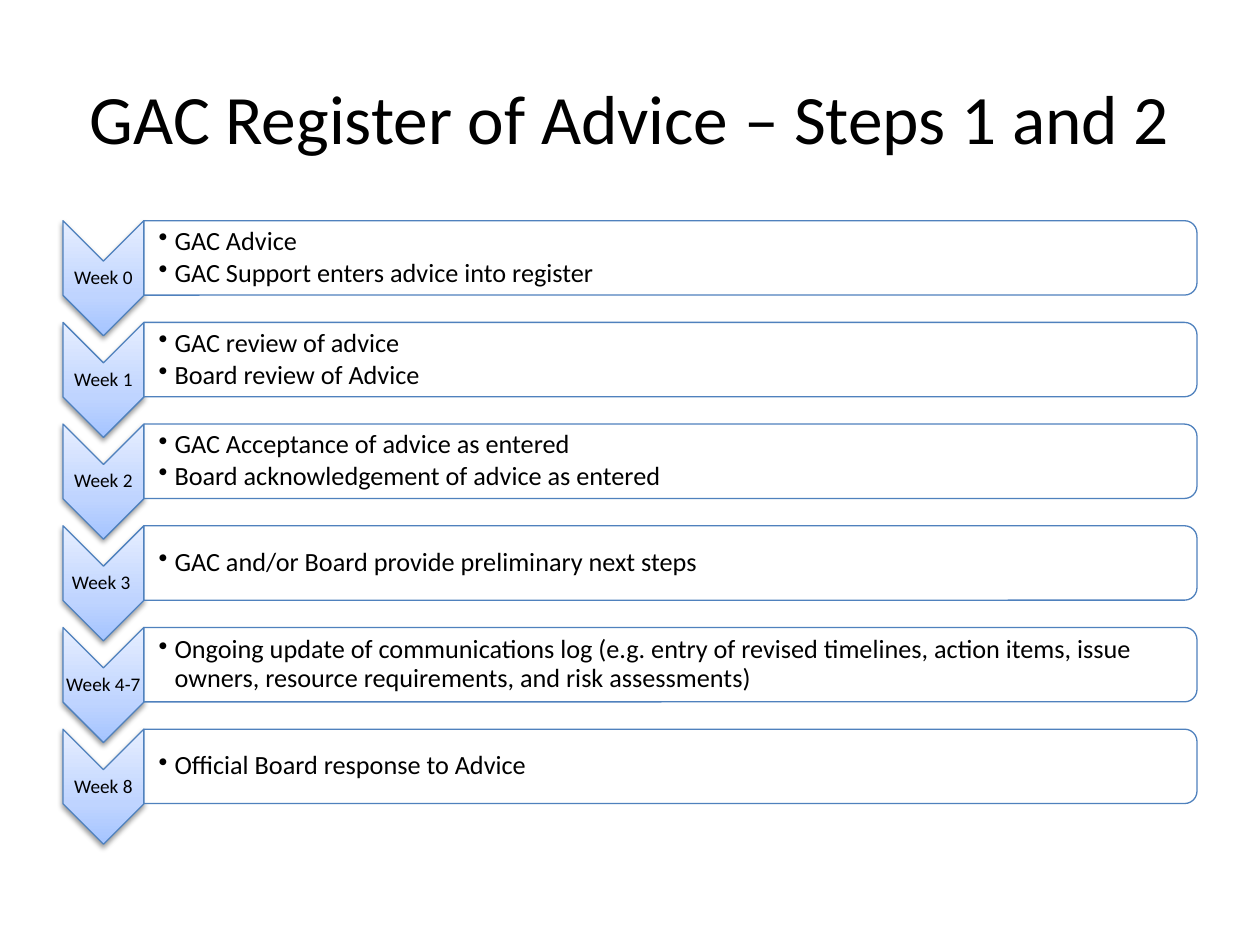
from typing import NamedTuple

from lxml.etree import SubElement
from pptx import Presentation
from pptx.dml.color import RGBColor
from pptx.enum.shapes import MSO_SHAPE as SHAPE
from pptx.enum.text import MSO_ANCHOR as ANCHOR, PP_ALIGN as ALIGN
from pptx.oxml import parse_xml
from pptx.oxml.ns import nsdecls, qn
from pptx.util import Cm, Pt


class Step(NamedTuple):
    week: str
    items: list[str]


class Box(NamedTuple):
    left: float
    top: float
    width: float
    height: float


STEPS = [
    Step("Week 0", ["GAC Advice", "GAC Support enters advice into register"]),
    Step("Week 1", ["GAC review of advice", "Board review of Advice"]),
    Step("Week 2", ["GAC Acceptance of advice as entered",
                    "Board acknowledgement of advice as entered"]),
    Step("Week 3 ", ["GAC and/or Board provide preliminary next steps"]),
    Step("Week 4-7", ["Ongoing update of communications log (e.g. entry of revised "
                      "timelines, action items, issue owners, resource requirements, "
                      "and risk assessments)"]),
    Step("Week 8", ["Official Board response to Advice"]),
]
FIRST_TOP, PITCH = 4.45, 2.05
ARROW_LEFT, ARROW_WIDTH, ARROW_HEIGHT = 1.27, 1.63, 2.32
PANEL_WIDTH, PANEL_HEIGHT = 21.23, 1.5
PANEL_LEFT = ARROW_LEFT + ARROW_WIDTH
GRADIENT = [(0, "A4C4FF"), (35, "BFD4FF"), (100, "E6EEFF")]
OUTLINE = "4F81BD"


def color(value: str) -> RGBColor:
    return RGBColor.from_string(value)


def add_text(slide, box: Box, lines: list[str], *, size: float, align=ALIGN.LEFT,
             inset: float = 0.03, left_inset: float = 0.03, spacing: float = 0.9,
             after: float = 0, bullet: bool = False) -> None:
    tf = slide.shapes.add_textbox(*map(Cm, box)).text_frame
    tf.word_wrap = True
    tf.vertical_anchor = ANCHOR.MIDDLE
    tf.margin_left = Cm(left_inset)
    tf.margin_top = tf.margin_right = tf.margin_bottom = Cm(inset)
    for i, line in enumerate(lines):
        p = tf.paragraphs[0] if i == 0 else tf.add_paragraph()
        p.alignment, p.line_spacing, p.space_after = align, spacing, Pt(after)
        r = p.add_run()
        r.text = line
        r.font.name, r.font.size = "Calibri", Pt(size)
        r.font.color.rgb = color("000000")
        if bullet:
            pPr = p._p.get_or_add_pPr()
            pPr.set("marL", str(Cm(0.32)))
            pPr.set("indent", str(-Cm(0.32)))
            SubElement(pPr, qn("a:buChar"), char="•")


def add_turned(slide, kind, box: Box):
    left = box.left + (box.width - box.height) / 2
    top = box.top + (box.height - box.width) / 2
    s = slide.shapes.add_shape(kind, *map(Cm, (left, top, box.height, box.width)))
    s.rotation = 90
    s.shadow.inherit = False
    s.line.color.rgb = color(OUTLINE)
    s.line.width = Pt(0.75)
    return s


def add_arrow(slide, box: Box) -> None:
    spPr = add_turned(slide, SHAPE.CHEVRON, box)._element.spPr
    stops = "".join(f'<a:gs pos="{pos * 1000}"><a:srgbClr val="{c}"/></a:gs>'
                    for pos, c in GRADIENT)
    spPr.find(qn("a:prstGeom")).addnext(parse_xml(
        f'<a:gradFill {nsdecls("a")} rotWithShape="0"><a:gsLst>{stops}</a:gsLst>'
        '<a:lin ang="16200000" scaled="0"/></a:gradFill>'))
    spPr.find(qn("a:effectLst")).append(parse_xml(
        f'<a:outerShdw {nsdecls("a")} blurRad="{Pt(3.1)}" dist="{Pt(1.6)}" '
        'dir="5400000" rotWithShape="0"><a:srgbClr val="000000">'
        '<a:alpha val="38000"/></a:srgbClr></a:outerShdw>'))


def add_panel(slide, box: Box) -> None:
    s = add_turned(slide, SHAPE.ROUND_2_SAME_RECTANGLE, box)
    s.fill.solid()
    s.fill.fore_color.rgb = color("FFFFFF")
    fill = s._element.spPr.find(qn("a:solidFill"))
    SubElement(fill[0], qn("a:alpha"), val="90000")


def add_step(slide, step: Step, top: float) -> None:
    add_arrow(slide, Box(ARROW_LEFT, top, ARROW_WIDTH, ARROW_HEIGHT))
    add_text(slide, Box(ARROW_LEFT, top + ARROW_WIDTH / 2, ARROW_WIDTH, 0.69),
             [step.week], size=11, align=ALIGN.CENTER)
    add_panel(slide, Box(PANEL_LEFT, top, PANEL_WIDTH, PANEL_HEIGHT))
    add_text(slide, Box(PANEL_LEFT, top + 0.07, PANEL_WIDTH - 0.07, PANEL_HEIGHT - 0.14),
             step.items, size=15, left_inset=0.3, after=2, bullet=True)


def main() -> None:
    prs = Presentation()
    prs.slide_width, prs.slide_height = Cm(25.4), Cm(19.05)
    slide = prs.slides.add_slide(prs.slide_layouts[6])
    add_text(slide, Box(1.27, 0.76, 22.86, 3.18),
             ["GAC Register of Advice – Steps 1 and 2"], size=39.6,
             align=ALIGN.CENTER, inset=0.25, left_inset=0.25, spacing=1)
    for i, step in enumerate(STEPS):
        add_step(slide, step, FIRST_TOP + i * PITCH)
    prs.save("out.pptx")


if __name__ == "__main__":
    main()
